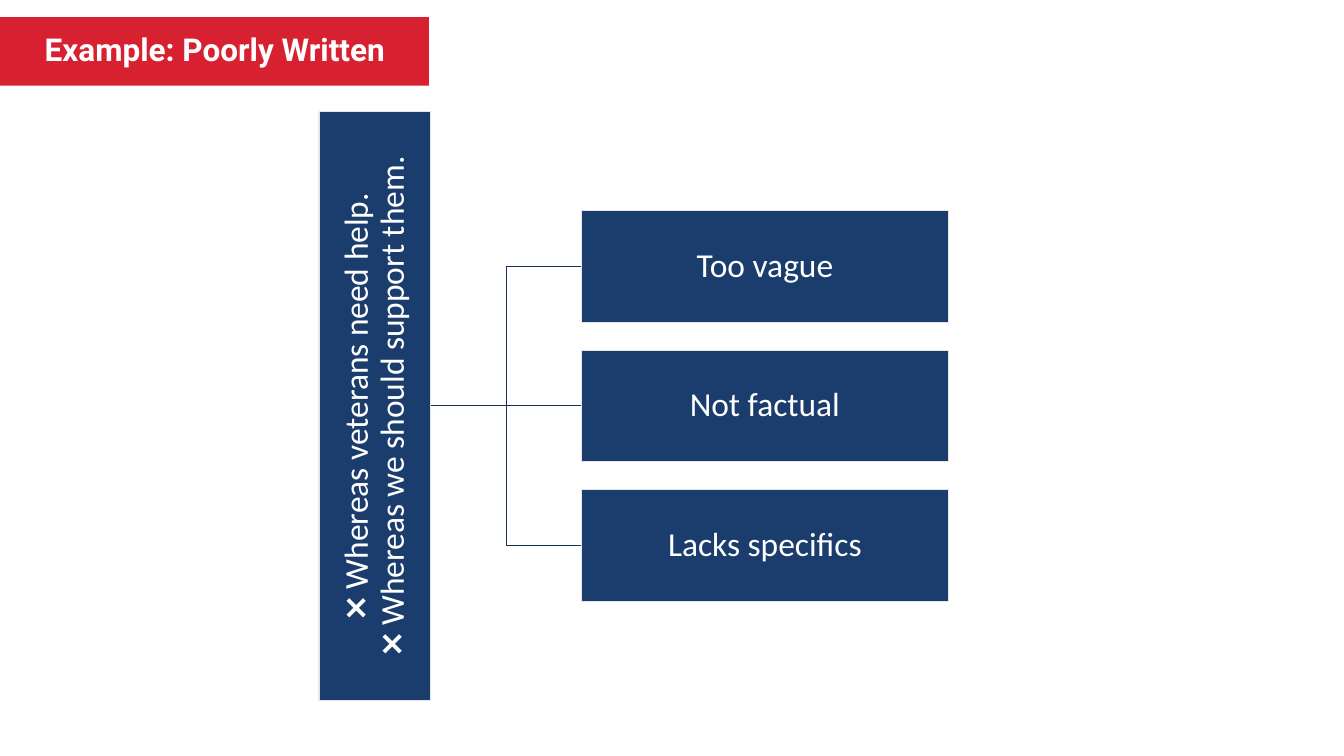
"""Build the slide that shows why a poorly written clause fails."""
from pptx import Presentation
from pptx.dml.color import RGBColor
from pptx.enum.shapes import MSO_CONNECTOR as Link, MSO_SHAPE as Preset
from pptx.enum.text import MSO_ANCHOR as Anchor, MSO_AUTO_SIZE as AutoSize, PP_ALIGN as Align
from pptx.oxml.ns import qn
from pptx.util import Inches, Pt
from lxml import etree

COLORS = {"red": "D72131", "navy": "1B3D6D", "link": "163157", "edge": "E7E6E6", "white": "FFFFFF"}


def write(box, text, *, font="Calibri", size=34, bold=False, align=Align.CENTER, left=0.02, inset=0.02):
    frame = box.text_frame
    frame.word_wrap = True
    frame.auto_size = AutoSize.NONE
    frame.vertical_anchor = Anchor.MIDDLE
    frame.margin_left = Inches(left)
    frame.margin_right = frame.margin_top = frame.margin_bottom = Inches(inset)
    para = frame.paragraphs[0]
    para.text = text
    para.alignment = align
    para.line_spacing = 0.9
    para.space_before = Pt(0)
    for span in para.runs:
        span.font.name = font
        span.font.size = Pt(size)
        span.font.bold = bold
        span.font.color.rgb = RGBColor.from_string(COLORS["white"])


deck = Presentation()
deck.slide_width, deck.slide_height = Inches(18.96), Inches(10.67)
page = deck.slides.add_slide(deck.slide_layouts[5])

title = page.shapes.title
title.left, title.top, title.width, title.height = Inches(0), Inches(0.24), Inches(6.05), Inches(0.97)
title.fill.solid()
title.fill.fore_color.rgb = RGBColor.from_string(COLORS["red"])
write(title, "Example: Poorly Written", font="Roboto", size=32, bold=True, align=Align.LEFT, left=0.63)

box_height, box_width, box_left = 1.58, 5.18, 8.2
clause_length, clause_right = 8.31, 6.08
middle, step = 5.73, 1.97
flaws = ["Too vague", "Not factual", "Lacks specifics"]
centers = [middle + (index - 1) * step for index in range(len(flaws))]

for center in reversed(centers):
    kind = Link.STRAIGHT if center == middle else Link.ELBOW
    link = page.shapes.add_connector(
        kind, Inches(clause_right), Inches(middle), Inches(box_left), Inches(center))
    link.line.color.rgb = RGBColor.from_string(COLORS["link"])
    link.line.width = Pt(1)
    etree.SubElement(link._element.spPr, qn("a:effectLst"))

clause_left = clause_right - (box_height + clause_length) / 2
clauses = "❌ Whereas veterans need help.\v❌ Whereas we should support them."
boxes = [(clauses, clause_left, middle, clause_length, 270)]
boxes += [(flaw, box_left, center, box_width, 0) for flaw, center in zip(flaws, centers)]

for text, left, center, width, rotation in boxes:
    box = page.shapes.add_shape(
        Preset.RECTANGLE, Inches(left), Inches(center - box_height / 2), Inches(width), Inches(box_height))
    box.rotation = rotation
    box.shadow.inherit = False
    box.fill.solid()
    box.fill.fore_color.rgb = RGBColor.from_string(COLORS["navy"])
    box.line.color.rgb = RGBColor.from_string(COLORS["edge"])
    box.line.width = Pt(1)
    write(box, text)

deck.save("out.pptx")
